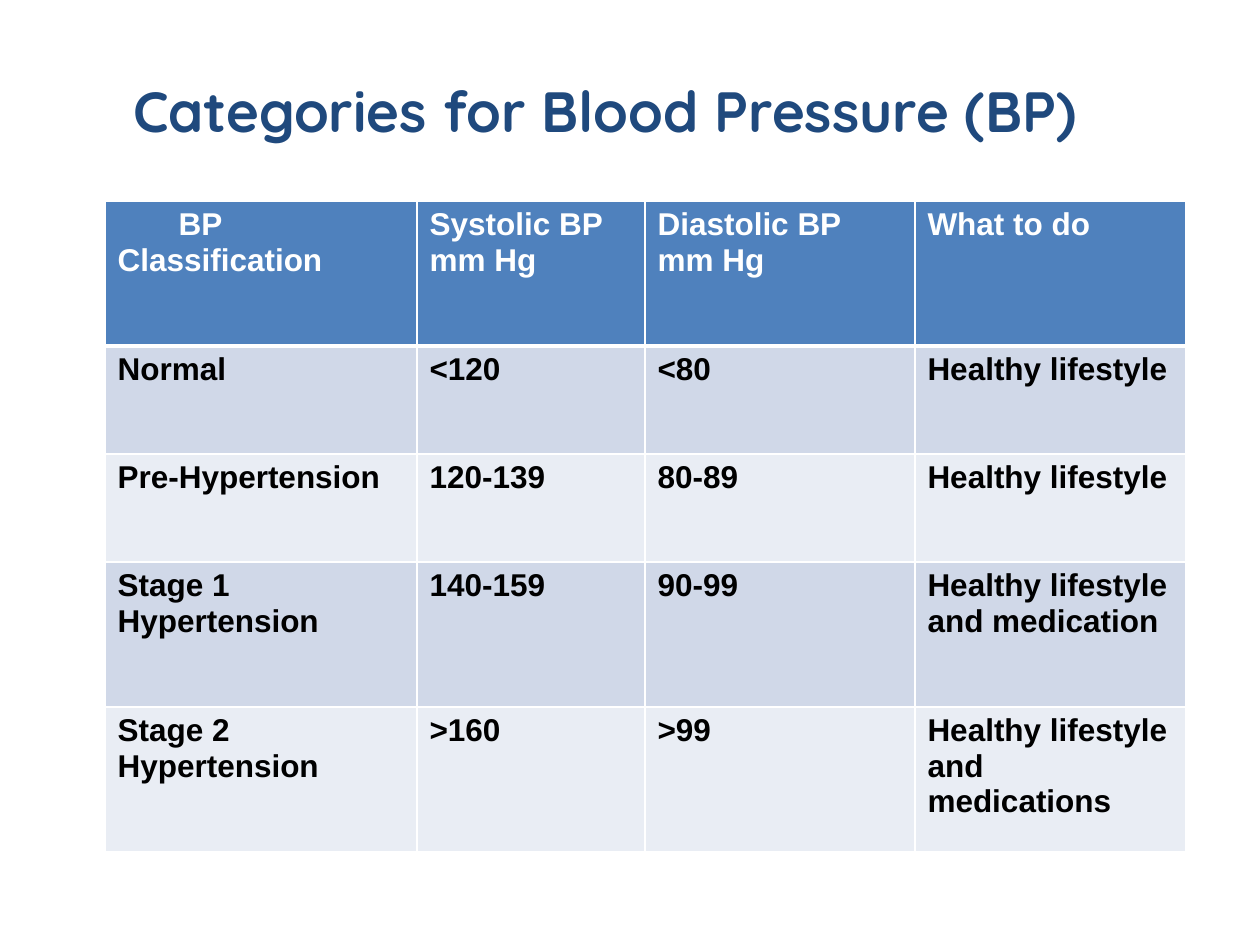
from lxml import etree
from pptx import Presentation
from pptx.dml.color import RGBColor
from pptx.enum.text import MSO_ANCHOR, PP_ALIGN
from pptx.oxml.ns import qn
from pptx.util import Emu, Pt

LEFT, CENTER = PP_ALIGN.LEFT, PP_ALIGN.CENTER
TOP, MIDDLE = MSO_ANCHOR.TOP, MSO_ANCHOR.MIDDLE
WHITE = RGBColor(0xFF, 0xFF, 0xFF)
BLACK = RGBColor(0x00, 0x00, 0x00)
NAVY = RGBColor(0x1F, 0x49, 0x7D)
HEADER_BLUE = RGBColor(0x4F, 0x81, 0xBD)
BANDS = (RGBColor(0xD0, 0xD8, 0xE8), RGBColor(0xE9, 0xED, 0xF4))

TITLE = "Categories for Blood Pressure (BP) "
ROWS = [
    ("BP\nClassification", "Systolic BP\nmm Hg", "Diastolic BP\nmm Hg", "What to do"),
    ("Normal", "<120", "<80", "Healthy lifestyle"),
    ("Pre-Hypertension", "120-139", "80-89", "Healthy lifestyle"),
    ("Stage 1\nHypertension", "140-159", "90-99", "Healthy lifestyle and medication"),
    ("Stage 2\nHypertension", ">160", ">99", "Healthy lifestyle and medications"),
]
COLUMN_WIDTHS = (312, 228, 270, 271)
ROW_HEIGHTS = (145, 108, 108, 145, 145)
FIRST_LINE_INDENT = 61


def px(count):
    return Emu(round(count * 914400 / 126))


def write(frame, text, font="Arial", size=18, color=BLACK, align=LEFT):
    """Write each line of text as its own bold paragraph."""
    for index, line in enumerate(text.split("\n")):
        para = frame.add_paragraph() if index else frame.paragraphs[0]
        para.alignment = align
        span = para.add_run()
        span.text = line
        span.font.name = font
        span.font.size = Pt(size)
        span.font.bold = True
        span.font.color.rgb = color


def add_borders(cell, **widths):
    """Draw white cell borders; keys are L, R, T, B in that order, values are points."""
    properties = cell._tc.get_or_add_tcPr()
    for position, (side, width) in enumerate(widths.items()):
        line = etree.Element(qn(f"a:ln{side}"), w=str(Pt(width)))
        fill = etree.SubElement(line, qn("a:solidFill"))
        etree.SubElement(fill, qn("a:srgbClr"), val=str(WHITE))
        properties.insert(position, line)


def add_title(page):
    box = page.shapes.add_textbox(px(95), px(42), px(1036), px(136))
    box.text_frame.word_wrap = True
    box.text_frame.vertical_anchor = MIDDLE
    write(box.text_frame, TITLE, font="Quicksand", size=32.4, color=NAVY, align=CENTER)


def add_pressure_table(page):
    table = page.shapes.add_table(
        len(ROWS), len(COLUMN_WIDTHS), px(105), px(201),
        px(sum(COLUMN_WIDTHS)), px(sum(ROW_HEIGHTS))).table
    for column, width in zip(table.columns, COLUMN_WIDTHS):
        column.width = px(width)
    for row, height in zip(table.rows, ROW_HEIGHTS):
        row.height = px(height)

    for r, texts in enumerate(ROWS):
        is_header = r == 0
        for c, text in enumerate(texts):
            cell = table.cell(r, c)
            cell.vertical_anchor = TOP
            cell.fill.solid()
            cell.fill.fore_color.rgb = HEADER_BLUE if is_header else BANDS[(r - 1) % 2]
            write(cell.text_frame, text, color=WHITE if is_header else BLACK)
            add_borders(cell, L=1, R=1, T=3 if r == 1 else 1, B=3 if is_header else 1)

    first_para = table.cell(0, 0).text_frame.paragraphs[0]
    first_para._p.get_or_add_pPr().set("indent", str(px(FIRST_LINE_INDENT)))


def main():
    deck = Presentation()
    deck.slide_width, deck.slide_height = px(1260), px(945)
    page = deck.slides.add_slide(deck.slide_layouts[6])
    add_title(page)
    add_pressure_table(page)
    deck.save("out.pptx")


if __name__ == "__main__":
    main()
